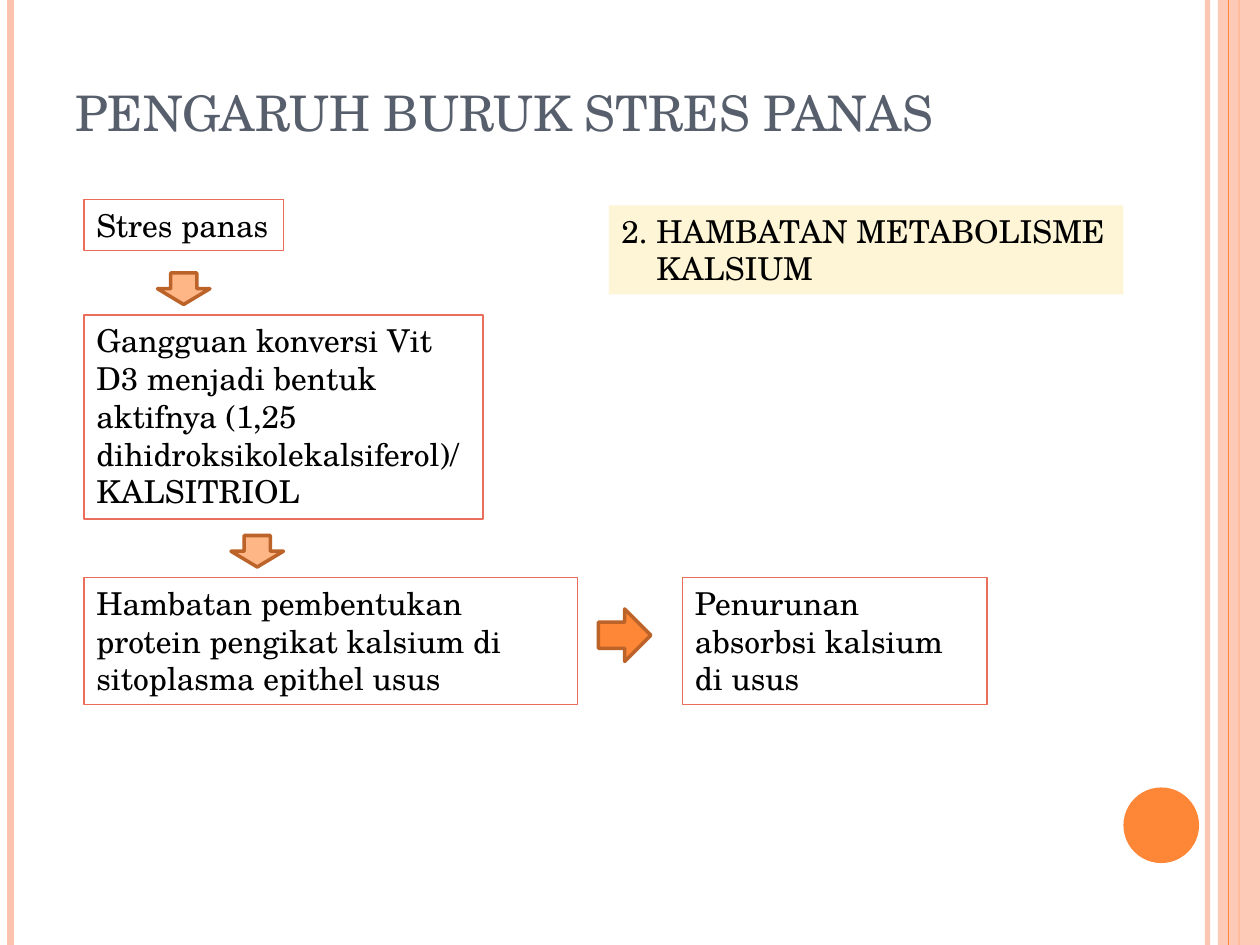
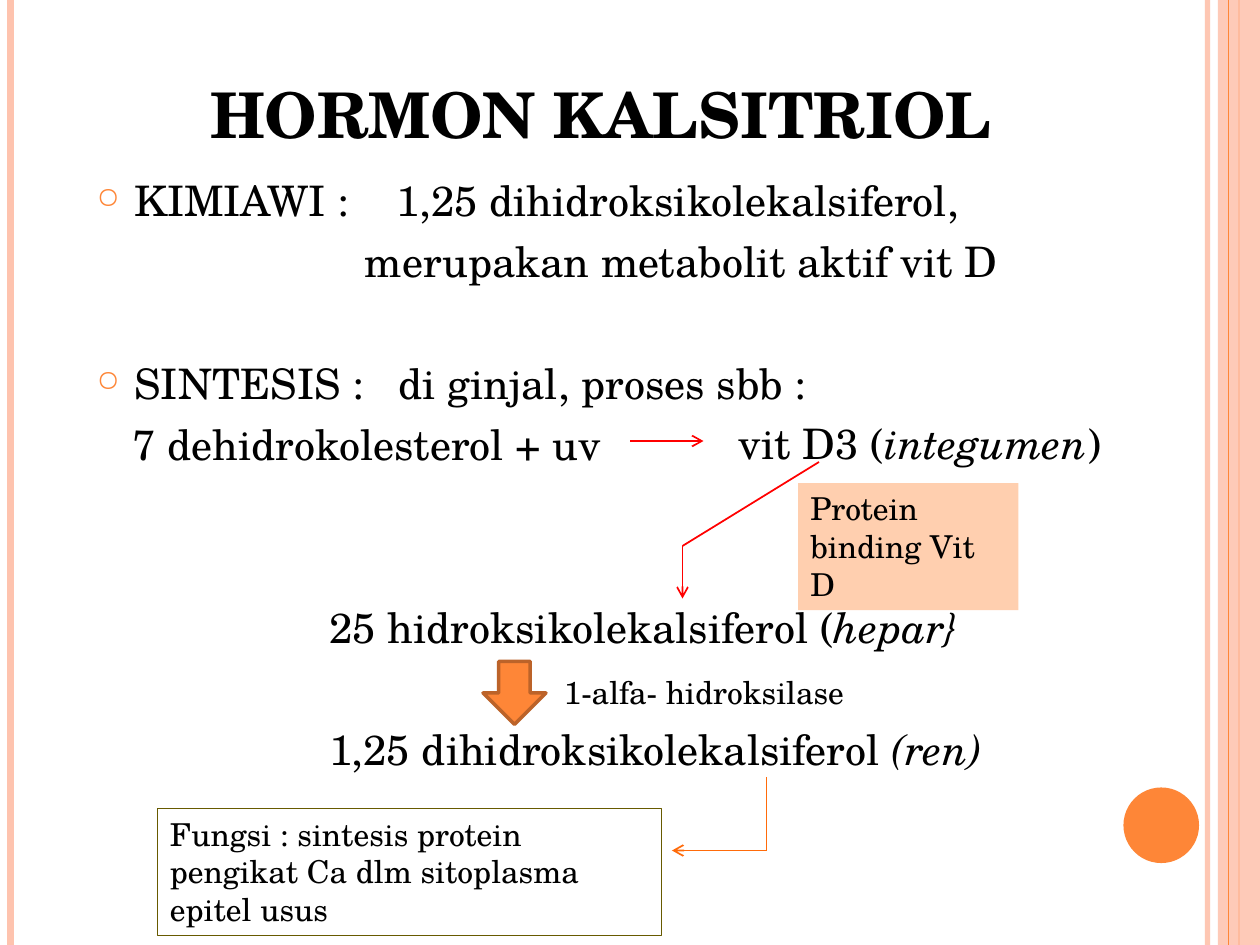
from lxml import etree
from pptx import Presentation
from pptx.dml.color import RGBColor
from pptx.enum.shapes import MSO_CONNECTOR, MSO_SHAPE as Preset
from pptx.enum.text import MSO_ANCHOR as Anchor, PP_ALIGN as Align
from pptx.oxml.ns import qn
from pptx.util import Pt

FONT = "TeX Gyre Schola"
BLACK = RGBColor(0x00, 0x00, 0x00)
SLATE = RGBColor(0x57, 0x5F, 0x6D)
ORANGE = RGBColor(0xFE, 0x86, 0x37)
LIGHT_ORANGE = RGBColor(0xFE, 0xB6, 0x87)
DARK_ORANGE = RGBColor(0xBC, 0x63, 0x29)
PATH_ORANGE = RGBColor(0xFF, 0x6B, 0x0A)
PEACH = RGBColor(0xFF, 0xCF, 0xAF)
PINK = RGBColor(0xFE, 0xC3, 0xAE)
CORAL = RGBColor(0xEB, 0x6E, 0x5A)
CREAM = RGBColor(0xFD, 0xF5, 0xD5)
OLIVE = RGBColor(0x67, 0x5A, 0x00)
RED = RGBColor(0xFF, 0x00, 0x00)

WIDTH, HEIGHT = 720, 540
BODY_SIZE, NOTE_SIZE = 24, 18
PARAGRAPH_GAP = 6
LINE_PITCH = 34.9  # one body line with its gap
BULLET_INDENT = 21.6

# Vertical rules: x, colour, weight, opacity in percent
RULES_BEHIND = [(690, PINK, 3, 93), (6, PINK, 4.5, 100), (708, ORANGE, 1.5, 100)]
RULES_FRONT = [(702, ORANGE, 0.75, 100)]

# Slide 1: text, (left, top, width, height)
EFFECT_BOXES = [
    ("Stres panas", (48, 114, 114, 29.1)),
    ("Gangguan konversi Vit D3 menjadi bentuk aktifnya "
     "(1,25 dihidroksikolekalsiferol)/KALSITRIOL", (48, 180, 228, 116.6)),
    ("Hambatan pembentukan protein pengikat kalsium di sitoplasma epithel usus",
     (48, 330, 282, 72.7)),
    ("Penurunan absorbsi kalsium di usus", (390, 330, 174, 72.7)),
]
EFFECT_ARROWS = [
    (Preset.DOWN_ARROW, (90, 156, 30, 18), LIGHT_ORANGE),
    (Preset.DOWN_ARROW, (132, 306, 30, 18), LIGHT_ORANGE),
    (Preset.RIGHT_ARROW, (342, 348, 30, 30), ORANGE),
]
TOPIC = ["2. HAMBATAN METABOLISME", "KALSIUM"]

# Slide 2: text, italic tail, closing text, indent (None for a bullet), lines skipped
SYNTHESIS = [
    ("KIMIAWI :", "", "", None, 0),
    ("SINTESIS :", "", "", None, 2),
    ("7 dehidrokolesterol + uv", "", "", 20.6, 0),
    ("25 hidroksikolekalsiferol (", "hepar}", "", 133, 2),
    ("1,25 dihidroksikolekalsiferol", " (ren)", "", 133, 1),
]
DETAILS = [
    ("1,25 dihidroksikolekalsiferol,", "", "", 18.3, 0),
    ("merupakan metabolit aktif vit D", "", "", 0, 0),
    ("di ginjal, proses sbb :", "", "", 19.4, 1),
    ("vit D3 (", "integumen", ")", 213.7, 0),
]
# Points along each path, colour; the last point carries the arrowhead
PATHS = [
    ([(360, 252), (402, 252)], RED),
    ([(468, 264), (390, 312), (390, 342)], RED),
    ([(438, 444), (438, 486), (384, 486)], PATH_ORANGE),
]


def set_opacity(color_format_parent, percent):
    color = color_format_parent.find(".//" + qn("a:srgbClr"))
    etree.SubElement(color, qn("a:alpha"), val=str(percent * 1000))


def add_line(slide, start, end, color, weight, opacity=100, arrow=False):
    line = slide.shapes.add_connector(MSO_CONNECTOR.STRAIGHT, *map(Pt, start + end))
    line.line.color.rgb = color
    line.line.width = Pt(weight)
    properties = line._element.spPr
    if opacity < 100:
        set_opacity(properties, opacity)
    if arrow:
        etree.SubElement(properties.find(qn("a:ln")), qn("a:tailEnd"), type="arrow")
    etree.SubElement(properties, qn("a:effectLst"))


def add_shape(slide, preset, frame, fill=None, line=None, weight=0.75):
    shape = slide.shapes.add_shape(preset, *map(Pt, frame))
    shape.shadow.inherit = False
    if fill is None:
        shape.fill.background()
    else:
        shape.fill.solid()
        shape.fill.fore_color.rgb = fill
    if line is None:
        shape.line.fill.background()
    else:
        shape.line.color.rgb = line
        shape.line.width = Pt(weight)
    return shape


def set_font(font, size, color=BLACK, bold=False):
    font.name = FONT
    font.size = Pt(size)
    font.color.rgb = color
    font.bold = bold


def write_lines(shape, lines, size, color=BLACK, bold=False, anchor=Anchor.TOP):
    """Write one paragraph per line and return the paragraphs."""
    frame = shape.text_frame
    frame.word_wrap = True
    frame.vertical_anchor = anchor
    frame.text = "\n".join(lines)
    for paragraph in frame.paragraphs:
        paragraph.alignment = Align.LEFT
        set_font(paragraph.font, size, color, bold)
    return frame.paragraphs


def add_box(slide, lines, frame, fill=None, line=None):
    shape = add_shape(slide, Preset.RECTANGLE, frame, fill, line)
    return write_lines(shape, lines, NOTE_SIZE)


def add_block_arrow(slide, preset, frame, fill):
    add_shape(slide, preset, frame, fill, DARK_ORANGE, 2)


def add_bullet(paragraph):
    properties = paragraph._p.get_or_add_pPr()
    properties.set("marL", str(Pt(BULLET_INDENT)))
    properties.set("indent", str(-Pt(BULLET_INDENT)))
    color = etree.SubElement(properties, qn("a:buClr"))
    etree.SubElement(color, qn("a:srgbClr"), val=str(ORANGE))
    etree.SubElement(properties, qn("a:buSzPct"), val="70000")
    etree.SubElement(properties, qn("a:buChar"), char="○")


def add_body(slide, rows, frame):
    """Write rows on the common line pitch, so that two columns stay level."""
    box = slide.shapes.add_textbox(*map(Pt, frame))
    paragraphs = write_lines(box, [""] * len(rows), BODY_SIZE)
    for paragraph, (text, italic, closing, indent, skipped) in zip(paragraphs, rows):
        paragraph.space_before = Pt(PARAGRAPH_GAP + skipped * LINE_PITCH)
        if indent is None:
            add_bullet(paragraph)
        else:
            paragraph._p.get_or_add_pPr().set("indent", str(Pt(indent)))
        for part in filter(None, (text, italic, closing)):
            run = paragraph.add_run()
            run.text = part
            set_font(run.font, BODY_SIZE)
            run.font.italic = part == italic


def add_slide(presentation, title, frame, size, color, bold=False):
    """Add a blank slide with the side bands, the dot and the title."""
    slide = presentation.slides.add_slide(presentation.slide_layouts[6])

    def add_rules(rules):
        for x, rule_color, weight, opacity in rules:
            add_line(slide, (x, 0), (x, HEIGHT), rule_color, weight, opacity)

    add_rules(RULES_BEHIND)
    band = add_shape(slide, Preset.RECTANGLE, (696, 0, 24, HEIGHT), PINK)
    set_opacity(band._element.spPr, 87)
    add_rules(RULES_FRONT)
    add_shape(slide, Preset.OVAL, (642, 450, 43.2, 43.2), ORANGE)
    box = slide.shapes.add_textbox(*map(Pt, frame))
    write_lines(box, [title], size, color, bold, Anchor.BOTTOM)
    return slide


def build_effects(presentation):
    slide = add_slide(presentation, "PENGARUH BURUK STRES PANAS",
                      (36, 21.6, 588, 62.6), 28, SLATE)
    for text, frame in EFFECT_BOXES:
        add_box(slide, [text], frame, line=CORAL)
    for preset, frame, fill in EFFECT_ARROWS:
        add_block_arrow(slide, preset, frame, fill)
    topic = add_box(slide, TOPIC, (348, 117.4, 294, 50.9), fill=CREAM)
    topic[1]._p.get_or_add_pPr().set("marL", str(Pt(20)))


def build_hormone(presentation):
    slide = add_slide(presentation, "HORMON KALSITRIOL",
                      (113, 0, 590.4, 90), 36, BLACK, bold=True)
    add_body(slide, SYNTHESIS, (48.2, 96, 590.4, 396))
    add_body(slide, DETAILS, (201.4, 96, 445, 150))
    for points, color in PATHS:
        for start, end in zip(points, points[1:]):
            add_line(slide, start, end, color, 1, arrow=end == points[-1])
    add_block_arrow(slide, Preset.DOWN_ARROW, (276, 378, 36, 36), ORANGE)
    add_box(slide, ["1-alfa- hidroksilase"], (315.1, 381, 200, 29.1))
    add_box(slide, ["Protein binding Vit D"], (456, 276, 126, 72.7), fill=PEACH)
    add_box(slide, ["Fungsi : sintesis protein pengikat Ca dlm sitoplasma epitel usus"],
            (90, 462, 288, 72.7), line=OLIVE)


def main():
    presentation = Presentation()
    presentation.slide_width = Pt(WIDTH)
    presentation.slide_height = Pt(HEIGHT)
    build_effects(presentation)
    build_hormone(presentation)
    presentation.save("out.pptx")


if __name__ == "__main__":
    main()
